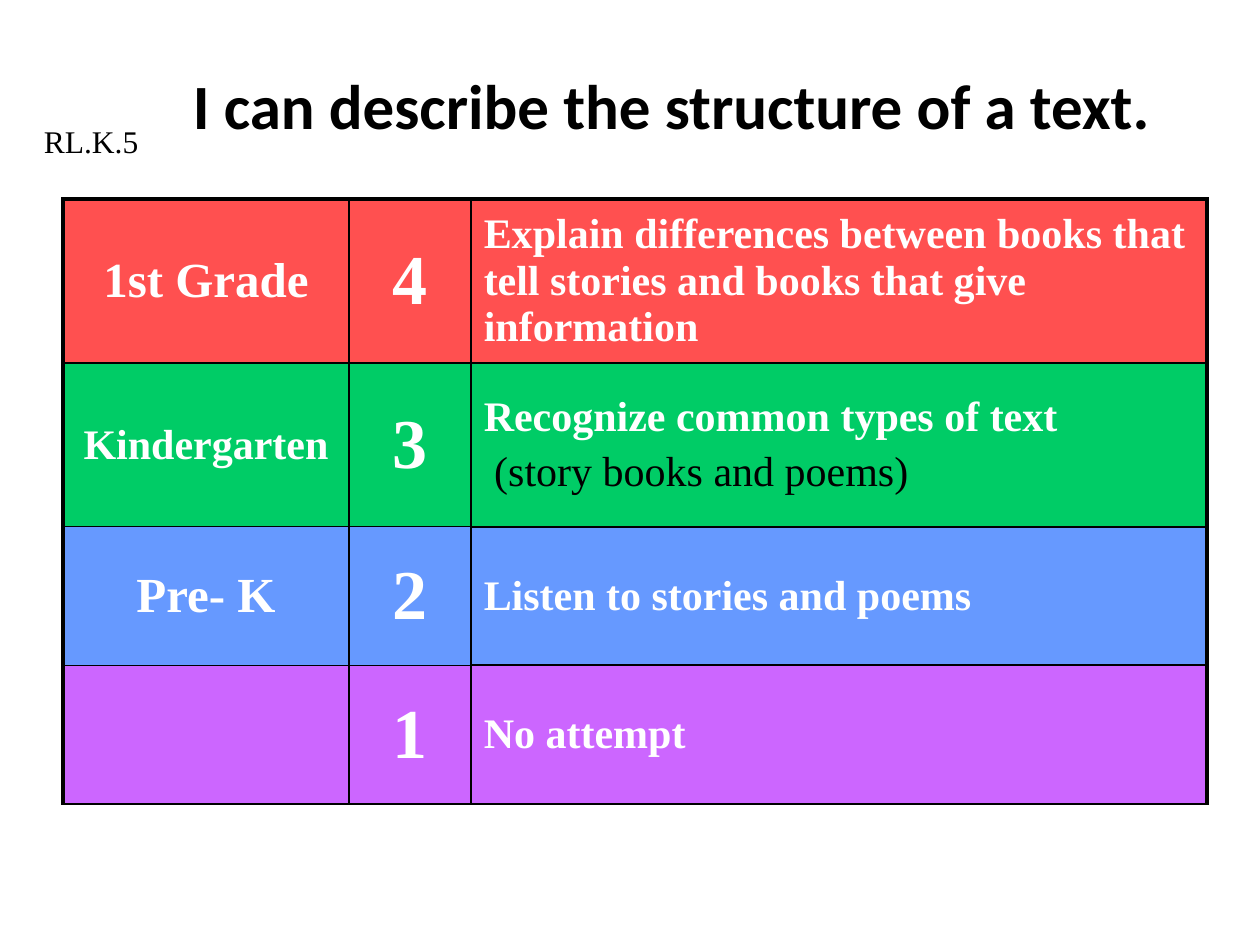
import pptx
import pptx.dml.color
import pptx.enum.text
import pptx.oxml
import pptx.oxml.ns
import pptx.util

WIDTH, HEIGHT = 10, 7.5
SERIF = "Times New Roman"
WHITE, BLACK = "FFFFFF", "000000"
LEFT = pptx.enum.text.PP_ALIGN.LEFT
CENTER = pptx.enum.text.PP_ALIGN.CENTER
MIDDLE = pptx.enum.text.MSO_ANCHOR.MIDDLE
TOP = pptx.enum.text.MSO_ANCHOR.TOP

# Rubric: fill, grade, grade size, score, statement, example
LEVELS = [
    ("FF5050", "1st Grade", 28, "4",
     "Explain differences between books that tell stories and books that give information", ""),
    ("00CC66", "Kindergarten", 24, "3",
     "Recognize common types of text", " (story books and poems)"),
    ("6699FF", "Pre- K", 28, "2", "Listen to stories and poems", ""),
    ("CC66FF", "", 28, "1", "No attempt", ""),
]
COLUMN_WIDTHS = [2.27, 0.97, 5.84]
ROW_HEIGHTS = [1.21, 1.3, 1.1, 1.1]

# Line widths in points: edges between columns, and edges between rows per column
COLUMN_EDGES = [2.25, 1, 1, 2.25]
ROW_EDGES = [[2.25] * 3, [1.5] * 3, [1, 1, 1.5], [1, 1, 1.5], [1.5] * 3]


def color(value):
    return pptx.dml.color.RGBColor.from_string(value)


def write_paragraph(paragraph, text, size, fill, alignment=LEFT, bold=False,
                    name=SERIF, space_share=0):
    paragraph.alignment = alignment
    paragraph.space_before = pptx.util.Pt(size * space_share)
    run = paragraph.add_run()
    run.text = text
    formats = {"name": name, "size": pptx.util.Pt(size), "bold": bold}
    for attribute, value in formats.items():
        setattr(run.font, attribute, value)
    run.font.color.rgb = color(fill)


def add_label(slide, box, text, size, anchor=TOP, **formats):
    """Add a text box whose box is given in shares of the slide's size."""
    left, top, width, height = box
    shape = slide.shapes.add_textbox(
        pptx.util.Inches(left * WIDTH), pptx.util.Inches(top * HEIGHT),
        pptx.util.Inches(width * WIDTH), pptx.util.Inches(height * HEIGHT))
    shape.text_frame.word_wrap = True
    shape.text_frame.vertical_anchor = anchor
    write_paragraph(shape.text_frame.paragraphs[0], text, size, BLACK, **formats)


def set_borders(cell, row, column):
    widths = {
        "lnL": COLUMN_EDGES[column],
        "lnR": COLUMN_EDGES[column + 1],
        "lnT": ROW_EDGES[row][column],
        "lnB": ROW_EDGES[row + 1][column],
    }
    properties = cell._tc.get_or_add_tcPr()
    for side, points in widths.items():
        properties.append(pptx.oxml.parse_xml(
            f'<a:{side} {pptx.oxml.ns.nsdecls("a")} w="{pptx.util.Pt(points)}">'
            f'<a:solidFill><a:srgbClr val="{BLACK}"/></a:solidFill></a:{side}>'))


def fill_cell(cell, lines):
    """Write lines of (text, size, colour, bold, alignment) into a cell."""
    cell.vertical_anchor = MIDDLE
    for index, (text, size, fill, bold, alignment) in enumerate(lines):
        frame = cell.text_frame
        paragraph = frame.add_paragraph() if index else frame.paragraphs[0]
        write_paragraph(paragraph, text, size, fill, alignment, bold, space_share=0.2)


def add_rubric(slide):
    frame = slide.shapes.add_table(
        len(LEVELS), len(COLUMN_WIDTHS),
        pptx.util.Inches(0.5), pptx.util.Inches(1.58),
        pptx.util.Inches(sum(COLUMN_WIDTHS)), pptx.util.Inches(sum(ROW_HEIGHTS)))
    table = frame.table
    for flag, value in {"first_row": False, "horz_banding": False}.items():
        setattr(table, flag, value)
    for column, width in zip(table.columns, COLUMN_WIDTHS):
        column.width = pptx.util.Inches(width)
    for row, height in zip(table.rows, ROW_HEIGHTS):
        row.height = pptx.util.Inches(height)

    for row, (fill, grade, grade_size, score, statement, example) in enumerate(LEVELS):
        contents = [
            [(grade, grade_size, WHITE, True, CENTER)],
            [(score, 40, WHITE, True, CENTER)],
            [(statement, 24, WHITE, True, LEFT), (example, 24, BLACK, False, LEFT)],
        ]
        for column, lines in enumerate(contents):
            cell = table.cell(row, column)
            set_borders(cell, row, column)
            cell.fill.solid()
            cell.fill.fore_color.rgb = color(fill)
            fill_cell(cell, [line for line in lines if line[0]])


def main():
    presentation = pptx.Presentation()
    presentation.slide_width = pptx.util.Inches(WIDTH)
    presentation.slide_height = pptx.util.Inches(HEIGHT)
    slide = presentation.slides.add_slide(presentation.slide_layouts[6])

    # Learning target
    add_label(slide, (0.108, 0.044, 0.85, 0.133), "I can describe the structure of a text.",
              36, anchor=MIDDLE, alignment=CENTER, bold=True, name="Calibri")
    # Rubric table
    add_rubric(slide)
    # Standard code
    add_label(slide, (0.025, 0.123, 0.142, 0.053), "RL.K.5", 18)

    presentation.save("out.pptx")


if __name__ == "__main__":
    main()
